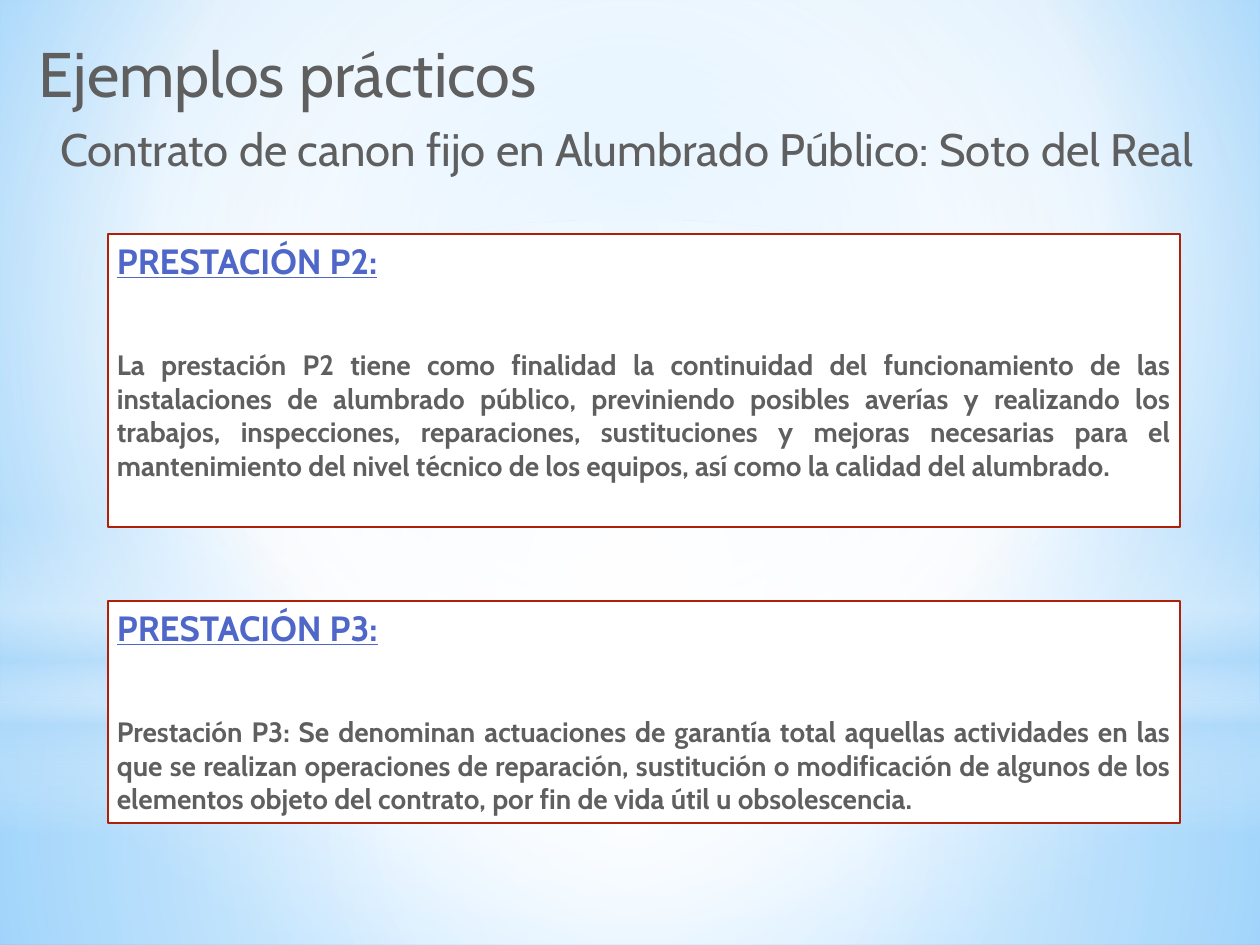
from dataclasses import dataclass
from typing import Optional

from lxml import etree
from pptx import Presentation
from pptx.dml.color import RGBColor
from pptx.enum.shapes import MSO_SHAPE as SHAPE
from pptx.enum.text import MSO_ANCHOR as ANCHOR, PP_ALIGN as ALIGN
from pptx.oxml.ns import qn
from pptx.util import Emu, Inches, Pt

PX = Inches(1) / 126
FONT = "Cabin"
COLORS = {
    "white": "FFFFFF", "mist": "B4DCFA", "sky": "9ED5FF", "azure": "5BB9FF",
    "border": "B01F07", "heading": "4E67C8", "text": "5F5F5F",
}


@dataclass
class Box:
    x: int
    y: int
    w: int
    h: int


@dataclass
class Gradient:
    stops: list[tuple[int, str, int]]
    center: Optional[tuple[int, int, int, int]] = (50, 50, 50, 50)


@dataclass
class Glow:
    box: Box
    gradient: Gradient
    kind: SHAPE = SHAPE.RECTANGLE


@dataclass
class Card:
    box: Box
    heading: str
    body: str


@dataclass
class Title:
    box: Box
    text: str
    size: int


BACKGROUND = Gradient([(0, "sky", 100), (60, "white", 100), (100, "azure", 100)],
                      (20, 10, 20, 60))
GLOWS = [
    Glow(Box(0, 703, 1260, 242),
         Gradient([(0, "white", 91), (37, "white", 76), (100, "mist", 79)])),
    Glow(Box(0, 0, 1260, 703),
         Gradient([(0, "white", 89), (48, "white", 62), (100, "mist", 79)])),
    Glow(Box(0, 519, 1260, 315),
         Gradient([(0, "white", 0), (29, "white", 30), (45, "mist", 40),
                   (55, "white", 26), (65, "mist", 60), (100, "white", 0)], None)),
    Glow(Box(0, 220, 1260, 703),
         Gradient([(0, "white", 100), (56, "white", 0)]), SHAPE.OVAL),
]
CARDS = [
    Card(Box(108, 601, 1072, 222), "PRESTACIÓN P3:",
         "Prestación P3: Se denominan actuaciones de garantía total aquellas "
         "actividades en las que se realizan operaciones de reparación, sustitución "
         "o modificación de algunos de los elementos objeto del contrato, por fin de "
         "vida útil u obsolescencia."),
    Card(Box(108, 234, 1072, 293), "PRESTACIÓN P2:",
         "La prestación P2 tiene como finalidad la continuidad del funcionamiento de "
         "las instalaciones de alumbrado público, previniendo posibles averías y "
         "realizando los trabajos, inspecciones, reparaciones, sustituciones y mejoras "
         "necesarias para el mantenimiento del nivel técnico de los equipos, así como "
         "la calidad del alumbrado."),
]
TITLES = [
    Title(Box(55, 116, 1280, 108),
          "Contrato de canon fijo en Alumbrado Público: Soto del Real", 26),
    Title(Box(34, 29, 1178, 108), "Ejemplos prácticos", 36),
]


def px(n: float) -> Emu:
    return Emu(round(n * PX))


def place(box: Box) -> list[Emu]:
    return [px(n) for n in (box.x, box.y, box.w, box.h)]


def rgb(name: str) -> RGBColor:
    return RGBColor.from_string(COLORS[name])


def set_gradient(parent, gradient: Gradient) -> None:
    old = parent.find(qn("a:solidFill"))
    grad = etree.Element(qn("a:gradFill"), rotWithShape="1")
    stops = etree.SubElement(grad, qn("a:gsLst"))
    for pos, color, opacity in gradient.stops:
        gs = etree.SubElement(stops, qn("a:gs"), pos=str(pos * 1000))
        clr = etree.SubElement(gs, qn("a:srgbClr"), val=COLORS[color])
        if opacity < 100:
            etree.SubElement(clr, qn("a:alpha"), val=str(opacity * 1000))
    if gradient.center:
        shade = etree.SubElement(grad, qn("a:path"), path="circle")
        sides = {k: str(v * 1000) for k, v in zip("ltrb", gradient.center)}
        etree.SubElement(shade, qn("a:fillToRect"), sides)
    else:
        etree.SubElement(grad, qn("a:lin"), ang="5400000", scaled="0")
    parent.replace(old, grad)


def add_background(s, gradient: Gradient) -> None:
    s.background.fill.solid()
    s.background.fill.fore_color.rgb = rgb("white")
    set_gradient(s.element.find(".//" + qn("p:bgPr")), gradient)


def add_glow(s, glow: Glow) -> None:
    sp = s.shapes.add_shape(glow.kind, *place(glow.box))
    sp.shadow.inherit = False
    sp.line.fill.background()
    sp.fill.solid()
    sp.fill.fore_color.rgb = rgb("white")
    set_gradient(sp.element.spPr, glow.gradient)


def setup_frame(tf, side: int) -> None:
    tf.word_wrap = True
    tf.vertical_anchor = ANCHOR.TOP
    tf.margin_left = tf.margin_right = px(side)
    tf.margin_top = tf.margin_bottom = px(5)


def write(p, text: str, size: int, color: str, bold: bool = False) -> None:
    p.text = text
    p.font.name = FONT
    p.font.size = Pt(size)
    p.font.bold = bold
    p.font.color.rgb = rgb(color)


def add_card(s, card: Card) -> None:
    sp = s.shapes.add_shape(SHAPE.RECTANGLE, *place(card.box))
    sp.shadow.inherit = False
    sp.fill.solid()
    sp.fill.fore_color.rgb = rgb("white")
    sp.line.color.rgb = rgb("border")
    sp.line.width = Pt(1.25)
    tf = sp.text_frame
    setup_frame(tf, 9)
    heading, body = tf.paragraphs[0], tf.add_paragraph()
    write(heading, card.heading, 20, "heading", True)
    heading.font.underline = True
    heading.space_after = Pt(38)
    write(body, card.body, 16, "text", True)
    heading.alignment = body.alignment = ALIGN.JUSTIFY


def add_title(s, title: Title) -> None:
    tf = s.shapes.add_textbox(*place(title.box)).text_frame
    setup_frame(tf, 5)
    write(tf.paragraphs[0], title.text, title.size, "text")


def main() -> None:
    prs = Presentation()
    prs.slide_width, prs.slide_height = px(1260), px(945)
    s = prs.slides.add_slide(prs.slide_layouts[6])
    add_background(s, BACKGROUND)
    for glow in GLOWS:
        add_glow(s, glow)
    for card in CARDS:
        add_card(s, card)
    for title in TITLES:
        add_title(s, title)
    prs.save("out.pptx")


if __name__ == "__main__":
    main()
